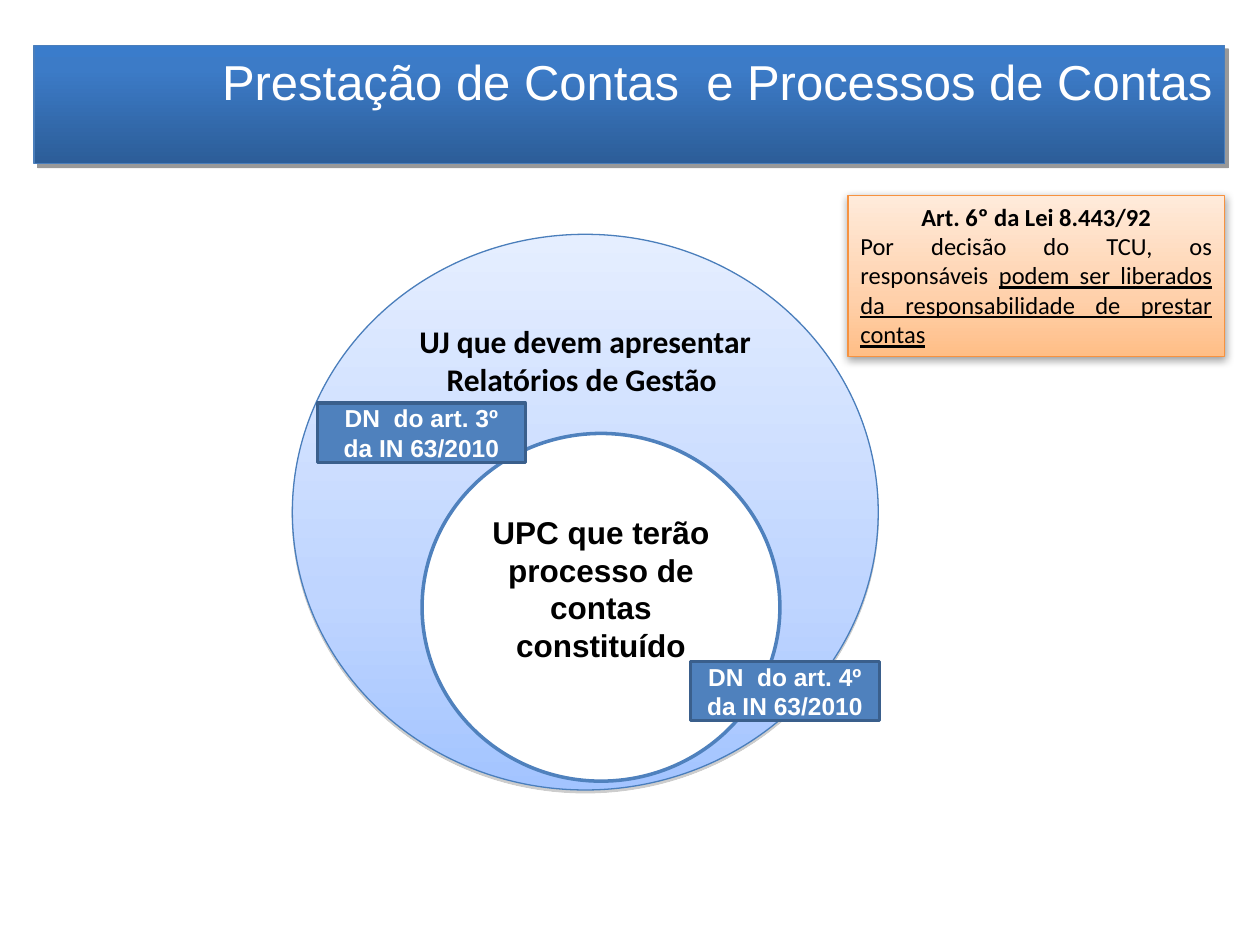
"""Builds the slide on the rendering of accounts and its nested circles."""
from lxml.etree import SubElement
from pptx import Presentation
from pptx.dml.color import RGBColor
from pptx.enum.shapes import MSO_SHAPE
from pptx.enum.text import MSO_ANCHOR, MSO_AUTO_SIZE, PP_ALIGN
from pptx.oxml.ns import qn
from pptx.util import Inches, Pt

COLORS = {
    "white": "FFFFFF", "black": "000000", "gray": "808080",
    "blue": "4F81BD", "edge": "4A7EBB", "navy": "3A5F8C", "orange": "F69240",
}
FADES = {
    "title": [(0, "3A7CCB"), (20, "3C7BC7"), (100, "2C5D98")],
    "ring": [(0, "E5EEFF"), (65, "BFD5FF"), (100, "A3C4FF")],
    "law": [(0, "FFBE86"), (35, "FFD0AA"), (100, "FFEBDB")],
}


class Deck:
    """Holds the style and the current slide."""

    def __init__(self):
        self.prs = Presentation()
        self.prs.slide_width, self.prs.slide_height = Inches(10), Inches(7.5)
        self.slide = self.prs.slides.add_slide(self.prs.slide_layouts[5])

    def color(self, name):
        return RGBColor.from_string(COLORS[name])

    def solid(self, shape, name):
        shape.fill.solid()
        shape.fill.fore_color.rgb = self.color(name)

    def fade(self, shape, name, angle=270):
        shape.fill.gradient()
        shape.fill.gradient_angle = angle
        stops = shape._element.spPr.find(".//" + qn("a:gsLst"))
        for stop in list(stops):
            stops.remove(stop)
        for place, tone in FADES[name]:
            stop = SubElement(stops, qn("a:gs"), pos=str(place * 1000))
            SubElement(stop, qn("a:srgbClr"), val=tone)

    def edge(self, shape, name, width):
        shape.line.color.rgb = self.color(name)
        shape.line.width = Pt(width)

    def shadow(self, shape, name, alpha, blur, dist, angle):
        shape.shadow.inherit = False
        effects = shape._element.spPr.find(qn("a:effectLst"))
        outer = SubElement(effects, qn("a:outerShdw"), blurRad=str(Pt(blur)),
                           dist=str(Pt(dist)), dir=str(angle * 60000),
                           algn="ctr", rotWithShape="0")
        tone = SubElement(outer, qn("a:srgbClr"), val=COLORS[name])
        SubElement(tone, qn("a:alpha"), val=str(alpha * 1000))

    def text(self, par, runs, size, face, tone, align=PP_ALIGN.CENTER):
        par.alignment = align
        for words, style in runs:
            run = par.add_run()
            run.text = words
            values = {"size": Pt(size), "name": face, "bold": False, **style}
            for key, value in values.items():
                setattr(run.font, key, value)
            run.font.color.rgb = self.color(tone)

    def shape(self, kind, box, anchor=MSO_ANCHOR.MIDDLE):
        item = self.slide.shapes.add_shape(kind, *map(Inches, box))
        item.shadow.inherit = False
        item.text_frame.word_wrap = True
        item.text_frame.vertical_anchor = anchor
        return item

    def title(self, words, box):
        item = self.slide.shapes.title
        for key, value in zip(("left", "top", "width", "height"), box):
            setattr(item, key, Inches(value))
        self.fade(item, "title")
        self.edge(item, "edge", 0.75)
        self.shadow(item, "black", 40, 0, 3, 45)
        frame = item.text_frame
        frame.auto_size = MSO_AUTO_SIZE.NONE
        frame.vertical_anchor = MSO_ANCHOR.TOP
        self.text(frame.paragraphs[0], [(words, {})], 28, "Arial", "white",
                  PP_ALIGN.RIGHT)

    def ring(self, words, box):
        item = self.shape(MSO_SHAPE.OVAL, box, MSO_ANCHOR.TOP)
        self.fade(item, "ring")
        self.edge(item, "edge", 0.75)
        self.shadow(item, "gray", 38, 0, 1.6, 90)
        self.text(item.text_frame.paragraphs[0], [(words, {"bold": True})],
                  18, "Calibri", "black")

    def core(self, words, box):
        item = self.shape(MSO_SHAPE.FLOWCHART_CONNECTOR, box)
        self.solid(item, "white")
        self.edge(item, "blue", 2)
        item.text_frame.margin_bottom = Inches(0.35)
        self.text(item.text_frame.paragraphs[0], [(words, {"bold": True})],
                  18, "Arial", "black")

    def tag(self, words, box):
        item = self.shape(MSO_SHAPE.RECTANGLE, box)
        self.solid(item, "blue")
        self.edge(item, "navy", 2)
        self.text(item.text_frame.paragraphs[0], [(words, {"bold": True})],
                  14, "Arial", "white")

    def law(self, head, body, box):
        item = self.shape(MSO_SHAPE.RECTANGLE, box, MSO_ANCHOR.TOP)
        self.fade(item, "law", 90)
        self.edge(item, "orange", 0.75)
        self.shadow(item, "black", 38, 5, 1.6, 90)
        frame = item.text_frame
        frame.auto_size = MSO_AUTO_SIZE.SHAPE_TO_FIT_TEXT
        self.text(frame.paragraphs[0], [(head, {"bold": True})],
                  14, "Calibri", "black")
        self.text(frame.add_paragraph(), body, 14, "Calibri", "black",
                  PP_ALIGN.JUSTIFY)


def main():
    deck = Deck()
    deck.title("Prestação de Contas  e Processos de Contas",
               (0.27, 0.36, 9.45, 0.94))
    deck.ring("UJ que devem apresentar Relatórios de Gestão ",
              (2.32, 1.86, 4.65, 4.41))
    deck.core("UPC que terão processo de contas constituído",
              (3.35, 3.44, 2.84, 2.76))
    for number, box in ((4, (5.48, 5.25, 1.5, 0.47)),
                        (3, (2.52, 3.2, 1.65, 0.47))):
        deck.tag(f"DN  do art. {number}º da IN 63/2010", box)
    deck.law("Art. 6º da Lei 8.443/92",
             [("Por decisão do TCU, os responsáveis ", {}),
              ("podem ser liberados da responsabilidade de prestar contas",
               {"underline": True})],
             (6.73, 1.55, 2.99, 1.28))
    deck.prs.save("out.pptx")


if __name__ == "__main__":
    main()
